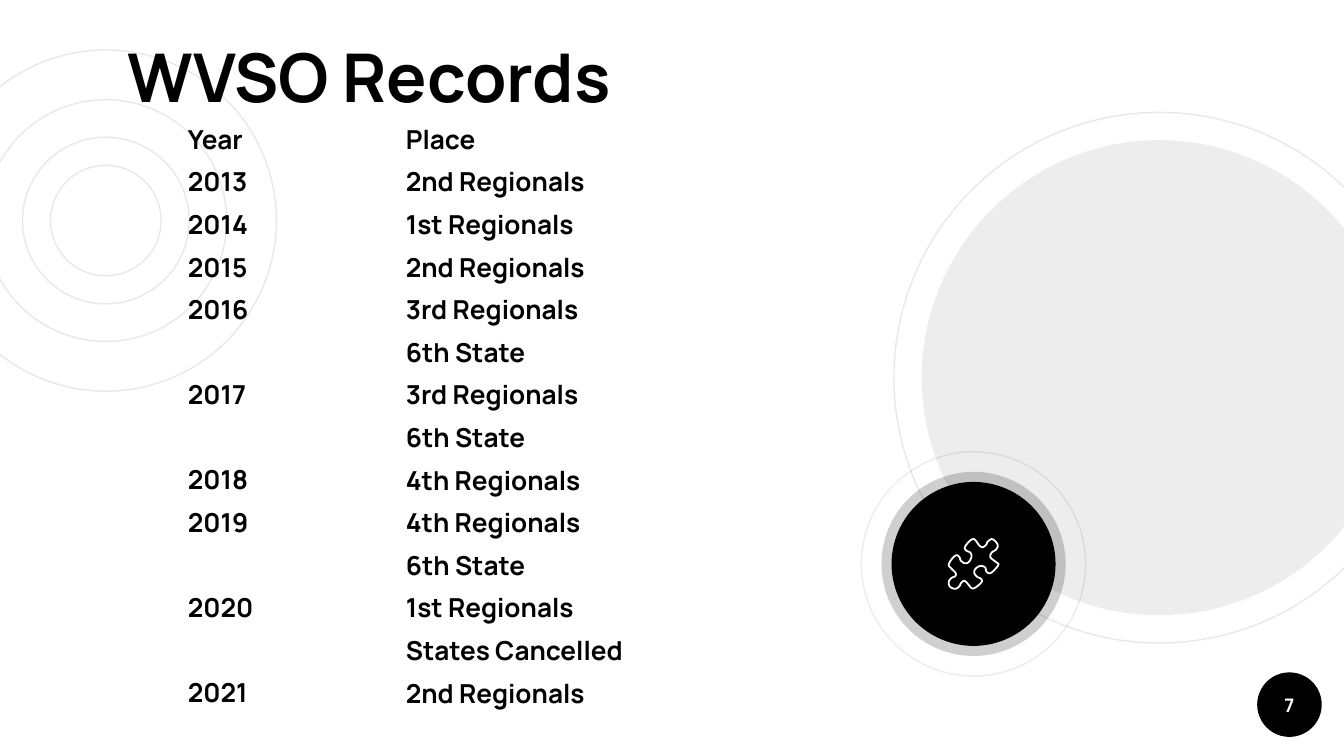
from lxml.etree import SubElement
from pptx import Presentation
from pptx.dml.color import RGBColor
from pptx.enum.shapes import MSO_SHAPE as Kind
from pptx.enum.text import MSO_ANCHOR as Anchor, MSO_AUTO_SIZE as Fit, PP_ALIGN as Align
from pptx.oxml.ns import qn
from pptx.util import Cm, Pt

BLACK = RGBColor(0, 0, 0)
WHITE = RGBColor(255, 255, 255)
GREY = RGBColor(0xE8, 0xE8, 0xE8)
FONT = "Manrope"
PITCH = 22.8  # points from one list row to the next
GAP = 6

deck = Presentation()
deck.slide_width, deck.slide_height = Cm(25.4), Cm(14.29)
slide = deck.slides.add_slide(deck.slide_layouts[3])
shapes = slide.shapes


def add_disc(x, y, size, alpha=None, kind=Kind.OVAL):
    """Add a round shape centred on x, y: a thin ring, or black at alpha percent."""
    disc = shapes.add_shape(kind, Cm(x - size / 2), Cm(y - size / 2), Cm(size), Cm(size))
    disc.shadow.inherit = False
    if alpha is None:
        disc.fill.background()
        disc.line.color.rgb = GREY
        disc.line.width = Pt(0.75)
        return disc
    disc.line.fill.background()
    disc.fill.solid()
    disc.fill.fore_color.rgb = BLACK
    if alpha < 100:
        tint = disc._element.spPr.find(qn("a:solidFill"))[0]
        SubElement(tint, qn("a:alpha"), val=str(alpha * 1000))
    return disc


def style(para, size, color=BLACK):
    for run in para.runs:
        font = run.font
        font.name, font.size, font.bold = FONT, Pt(size), True
        font.color.rgb = color


# Background circles and page number
for size in (6.45, 3.15, 4.57, 2.09):
    add_disc(2, 4.17, size)
page = add_disc(24.37, 13.32, 1.22, 100)
add_disc(21.91, 7.14, 10.03)
add_disc(21.91, 7.14, 8.98, 7)

frame = page.text_frame
frame.text = "7"
frame.word_wrap = False
frame.vertical_anchor = Anchor.MIDDLE
frame.paragraphs[0].alignment = Align.CENTER
style(frame.paragraphs[0], 10, WHITE)

# Title and the two lists
rows = [
    ("Year", "Place"),
    ("2013", "2nd Regionals"),
    ("2014", "1st Regionals"),
    ("2015", "2nd Regionals"),
    ("2016", "3rd Regionals"),
    ("", "6th State"),
    ("2017", "3rd Regionals"),
    ("", "6th State"),
    ("2018", "4th Regionals"),
    ("2019", "4th Regionals"),
    ("", "6th State"),
    ("2020", "1st Regionals"),
    ("", "States Cancelled"),
    ("2021", "2nd Regionals"),
]
years, places = zip(*rows)
title, left, right = slide.placeholders
blocks = [
    (left, years, 3.3, 2.08, 3.3, 12.07, 14, Anchor.TOP),
    (title, ["WVSO Records"], 2.16, 0.54, 14.5, 1.9, 36, Anchor.BOTTOM),
    (right, places, 7.42, 2.08, 6.22, 12.07, 14, Anchor.TOP),
]
for box, lines, x, y, wide, high, size, anchor in blocks:
    shapes._spTree.append(box._element)  # in front of the circles
    box.left, box.top, box.width, box.height = Cm(x), Cm(y), Cm(wide), Cm(high)
    frame = box.text_frame
    frame.text = "\n".join(line for line in lines if line)
    frame.auto_size = Fit.NONE
    frame.word_wrap = True
    frame.vertical_anchor = anchor
    frame.margin_left = frame.margin_right = Cm(0.25)
    frame.margin_top = frame.margin_bottom = Cm(0.25)
    spots = [i for i, line in enumerate(lines) if line]
    for para, spot, last in zip(frame.paragraphs, spots, [-1] + spots):
        para.alignment = Align.LEFT
        style(para, size)
        if box is not title:
            para.line_spacing = 1.0
            para.space_before = Pt(GAP + PITCH * (spot - last - 1))
            props = para._p.get_or_add_pPr()
            props.set("marL", "0")
            props.set("indent", "0")
            SubElement(props, qn("a:buNone"))

# Badge with a puzzle piece
add_disc(18.4, 10.66, 3.48, 19)
add_disc(18.4, 10.66, 3.1, 100)
halo = add_disc(18.4, 10.66, 4.27, 7, Kind.DONUT)
halo.adjustments[0] = 0.007

# Knots of the outline, in hundredths of an inch
knots = [
    (32, 10), (35, 8), (36.5, 5), (35, 2), (32, 0), (29, 2), (28, 4), (25.5, 6),
    (23, 5), (20, 1), (18, 0), (15, 2), (12, 6), (13, 8.5), (16, 10), (17, 13),
    (15, 17), (12, 18), (9, 16), (8, 13.5), (6, 12), (3, 14), (0, 19), (2, 22),
    (5, 25), (5, 27.5), (2, 29), (0, 32), (1, 35.5), (5, 37), (8, 35), (9, 33),
    (11.5, 31), (14, 33), (17, 36.5), (20, 36), (24.5, 32), (24, 29.5), (21, 28),
    (19, 25), (20, 22), (23.5, 20), (27, 21), (28, 24), (30, 25.5), (33, 24),
    (37, 19), (35, 17), (31, 13.5),
]
curve = []
for i, b in enumerate(knots):  # Catmull-Rom spline through the knots
    a, c, d = knots[i - 1], knots[(i + 1) % len(knots)], knots[(i + 2) % len(knots)]
    for t in (0, 0.25, 0.5, 0.75):
        curve.append([
            b[k] + t * (c[k] - a[k]) / 2
            + t**2 * (2 * a[k] - 5 * b[k] + 4 * c[k] - d[k]) / 2
            + t**3 * (3 * b[k] - a[k] - 3 * c[k] + d[k]) / 2
            for k in (0, 1)
        ])
trace = [(Cm(17.93 + x * 0.0254), Cm(10.19 + y * 0.0254)) for x, y in curve]
pen = shapes.build_freeform(*trace[0])
pen.add_line_segments(trace[1:], close=True)
piece = pen.convert_to_shape()
piece.shadow.inherit = False
piece.fill.background()
piece.line.color.rgb = WHITE
piece.line.width = Pt(0.96)

deck.save("out.pptx")
